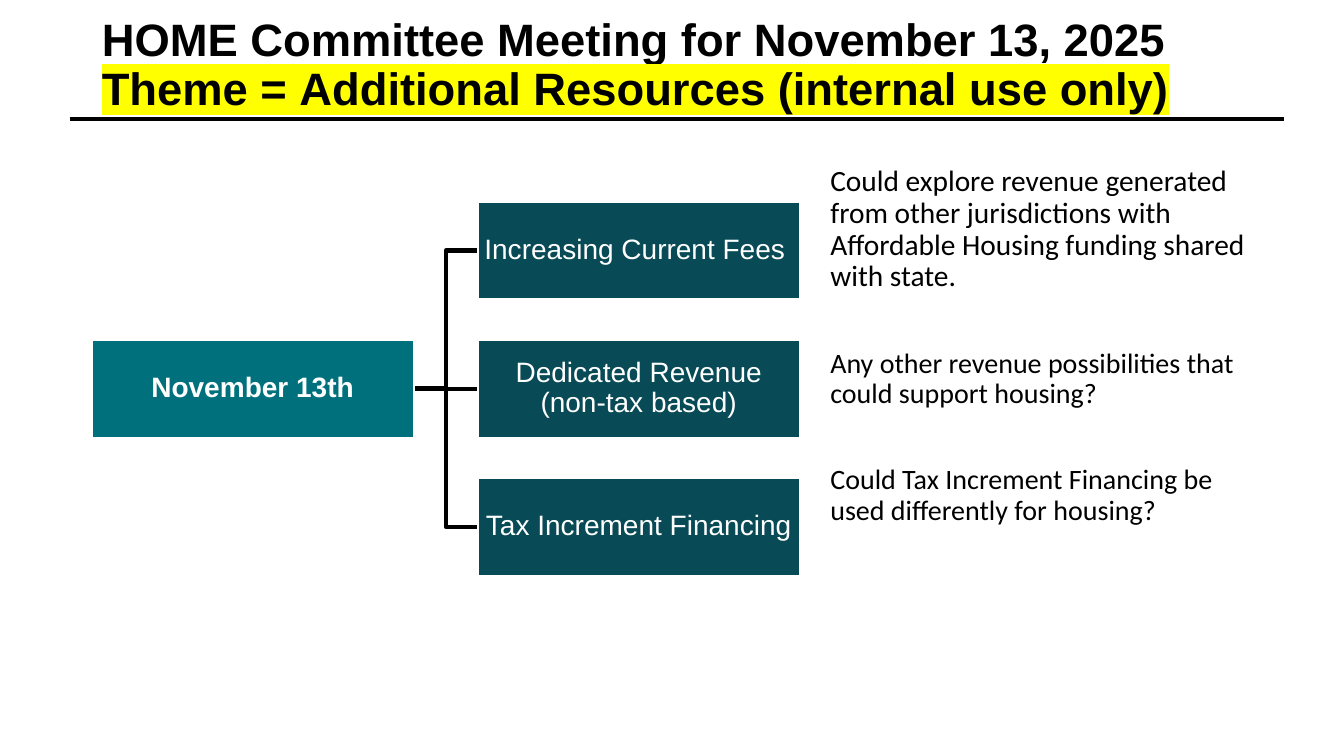
from copy import deepcopy

from lxml.etree import SubElement
from pptx import Presentation
from pptx.dml.color import RGBColor
from pptx.enum.shapes import MSO_CONNECTOR as Link, MSO_SHAPE as Shape
from pptx.enum.text import MSO_ANCHOR as Anchor, MSO_AUTO_SIZE as Fit, PP_ALIGN as Align
from pptx.oxml import parse_xml
from pptx.oxml.ns import nsdecls, qn
from pptx.util import Pt

BLACK = RGBColor(0x00, 0x00, 0x00)
WHITE = RGBColor(0xFF, 0xFF, 0xFF)
TEAL = RGBColor(0x00, 0x71, 0x7C)
DARK_TEAL = RGBColor(0x08, 0x4A, 0x55)
HIGHLIGHT = f'<a:highlight {nsdecls("a")}><a:srgbClr val="FFFF00"/></a:highlight>'

TITLE = ("HOME Committee Meeting for November 13, 2025 \v"
         "Theme =\u00a0Additional Resources (internal use only)")
MEETING = "November 13th"
TOPICS = [
    "Increasing Current Fees ",
    "Dedicated Revenue (non-tax based)",
    "Tax Increment Financing",
]
QUESTIONS = [
    ("Could explore revenue generated from other jurisdictions with "
     "Affordable Housing funding shared with state.", 21),
    ("Any other revenue possibilities that could support housing?", 20),
    ("Could Tax Increment Financing be used differently for housing?", 20),
]


def format_paragraph(para, name, size, color, align, bold=False):
    para.alignment = align
    para.line_spacing = 0.9
    for span in para.runs:
        span.font.name = name
        span.font.size = Pt(size)
        span.font.bold = bold
        span.font.color.rgb = color


def add_line(page, kind, start_x, start_y, end_x, end_y):
    line = page.shapes.add_connector(kind, Pt(start_x), Pt(start_y), Pt(end_x), Pt(end_y))
    line.line.color.rgb = BLACK
    line.line.width = Pt(3)
    SubElement(line.element.spPr, qn("a:effectLst"))
    return line


def add_heading(page, left, top, width, height):
    title = page.shapes.title
    title.left, title.top, title.width, title.height = Pt(left), Pt(top), Pt(width), Pt(height)
    frame = title.text_frame
    frame.text = TITLE
    frame.word_wrap = True
    frame.auto_size = Fit.NONE
    frame.vertical_anchor = Anchor.BOTTOM
    para = frame.paragraphs[0]
    format_paragraph(para, "Arial", 32.4, BLACK, Align.LEFT, True)
    first, theme = [span.font for span in para.runs]
    properties = [element for element in title.element.iter(qn("a:rPr"))]
    for line_break in title.element.iter(qn("a:br")):
        line_break.append(deepcopy(properties[0]))
    properties[-1].find(qn("a:solidFill")).addnext(parse_xml(HIGHLIGHT))
    rule_y = top + height - 0.7
    add_line(page, Link.STRAIGHT, left - 15.8, rule_y, left + width + 23.8, rule_y)


def add_node(page, text, fill, bold, left, top, width, height):
    box = page.shapes.add_shape(Shape.RECTANGLE, Pt(left), Pt(top), Pt(width), Pt(height))
    box.shadow.inherit = False
    box.fill.solid()
    box.fill.fore_color.rgb = fill
    box.line.color.rgb = WHITE
    box.line.width = Pt(1.5)
    frame = box.text_frame
    frame.text = text
    frame.word_wrap = True
    frame.vertical_anchor = Anchor.MIDDLE
    frame.margin_left = frame.margin_right = frame.margin_top = frame.margin_bottom = Pt(1)
    format_paragraph(frame.paragraphs[0], "Arial", 20, WHITE, Align.CENTER, bold)
    return box


def add_topic_tree(page, left, top, width, height):
    node_width, node_height = 230, 70
    step = (height - node_height) / (len(TOPICS) - 1)
    topic_left = left + width - node_width
    root_top = top + (height - node_height) / 2
    meeting = add_node(page, MEETING, TEAL, True, left, root_top, node_width, node_height)
    for index, text in enumerate(TOPICS):
        topic_top = top + index * step
        topic = add_node(page, text, DARK_TEAL, False,
                         topic_left, topic_top, node_width, node_height)
        kind = Link.STRAIGHT if topic_top == root_top else Link.ELBOW
        branch = add_line(page, kind, left + node_width, root_top + node_height / 2,
                          topic_left, topic_top + node_height / 2)
        branch.begin_connect(meeting, 3)
        branch.end_connect(topic, 1)
        meeting.element.addprevious(branch.element)


def add_questions(page, left, top, width, height):
    box = page.shapes.add_textbox(Pt(left), Pt(top), Pt(width), Pt(height))
    frame = box.text_frame
    frame.word_wrap = True
    for index, (text, size) in enumerate(QUESTIONS):
        para = frame.add_paragraph() if index else frame.paragraphs[0]
        para.text = text
        para.space_before = Pt(40 if index else 0)
        format_paragraph(para, "Calibri", size, BLACK, Align.LEFT)


def main():
    deck = Presentation()
    deck.slide_width, deck.slide_height = Pt(960), Pt(540)
    page = deck.slides.add_slide(deck.slide_layouts[5])
    add_heading(page, 65.5, 38.9, 828, 46.8)
    add_questions(page, 586, 115.2, 313.2, 339)
    add_topic_tree(page, 65.5, 144, 505.8, 267.2)
    deck.save("out.pptx")


if __name__ == "__main__":
    main()
